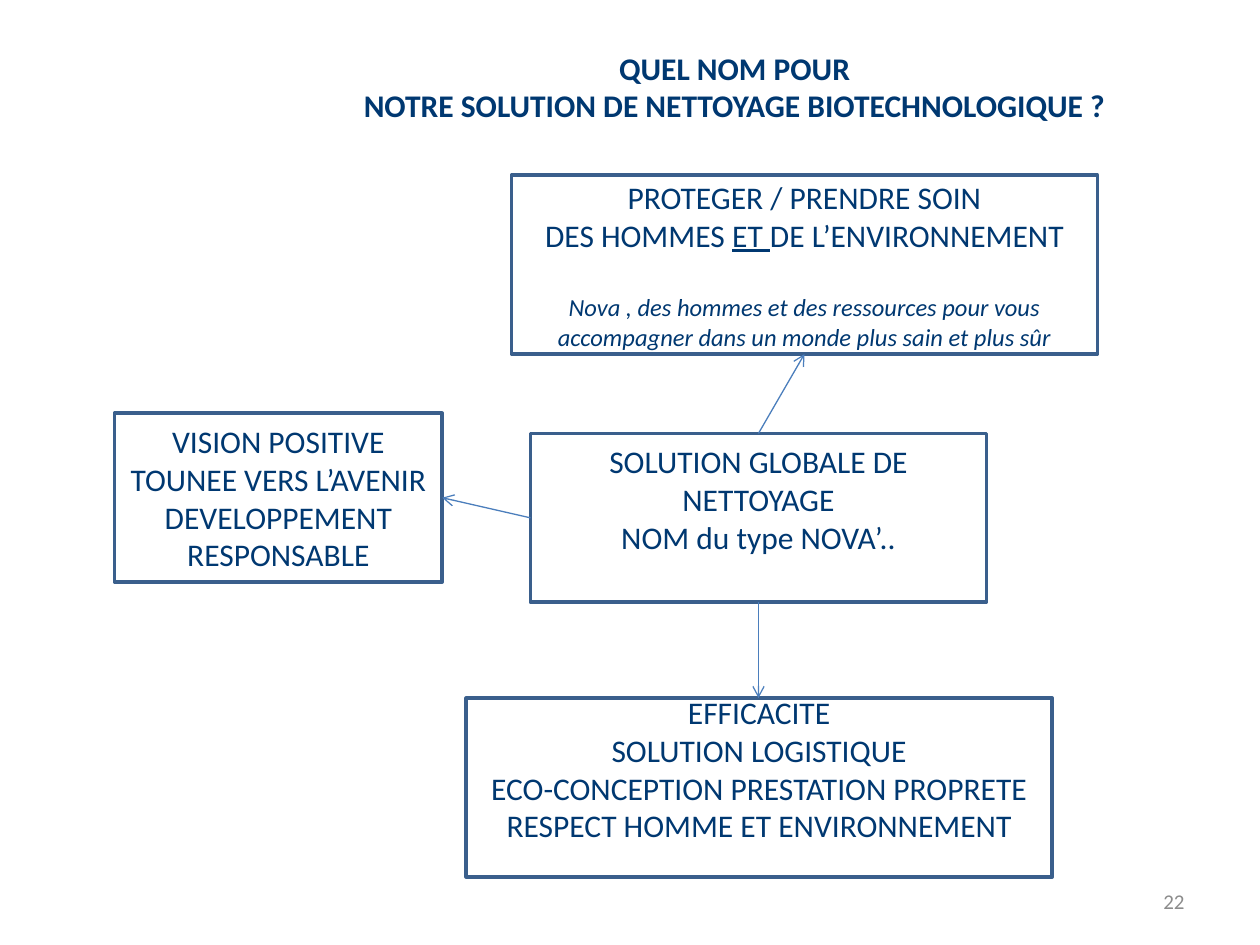
from lxml import etree
from pptx import Presentation
from pptx.dml.color import RGBColor
from pptx.enum import shapes, text
from pptx.oxml import ns
from pptx.util import Inches, Pt

COLORS = {"navy": "003871", "border": "3A5F8C", "arrow": "4B7EBC", "grey": "8C8C8C"}


def color(name):
    return RGBColor.from_string(COLORS[name])


def write(tf, paragraphs, align=text.PP_ALIGN.CENTER, top=0.05, bottom=0.05):
    """Each paragraph is (space before in points, [(text, font values), ...])."""
    frame = {"word_wrap": True, "auto_size": text.MSO_AUTO_SIZE.NONE,
             "vertical_anchor": text.MSO_ANCHOR.MIDDLE,
             "margin_top": Inches(top), "margin_bottom": Inches(bottom)}
    for name, value in frame.items():
        setattr(tf, name, value)
    for i, (before, runs) in enumerate(paragraphs):
        p = tf.add_paragraph() if i else tf.paragraphs[0]
        p.alignment = align
        if before:
            p.space_before = Pt(before)
        for words, extra in runs:
            r = p.add_run()
            r.text = words
            values = {"name": "Calibri", "size": Pt(18), **extra}
            r.font.color.rgb = color(values.pop("color", "navy"))
            for name, value in values.items():
                setattr(r.font, name, value)


prs = Presentation()
prs.slide_width, prs.slide_height = Inches(10), Inches(7.5)
s = prs.slides.add_slide(prs.slide_layouts[5])

# Title
title = s.shapes.title
title.left, title.top, title.width, title.height = map(Inches, (2.18, 0.29, 7.3, 0.71))
write(title.text_frame, [
    (0, [("QUEL NOM POUR", {"bold": True})]),
    (0, [("NOTRE SOLUTION DE NETTOYAGE BIOTECHNOLOGIQUE ?", {"bold": True})]),
], top=0.13)

# Boxes: position, bottom inset, paragraphs
boxes = {
    "solution": ((4.21, 3.44, 3.62, 1.34), 0.35, [
        (0, [("SOLUTION GLOBALE DE NETTOYAGE", {})]),
        (0, [("NOM du type NOVA’..", {})])]),
    "protection": ((4.06, 1.39, 4.65, 1.42), 0.05, [
        (0, [("PROTEGER / PRENDRE SOIN", {})]),
        (0, [("DES HOMMES ", {}), ("ET ", {"underline": True}),
             ("DE L’ENVIRONNEMENT", {})]),
        (22, [("Nova , des hommes et des ressources pour vous accompagner "
               "dans un monde plus sain et plus sûr",
               {"size": Pt(14), "italic": True})])]),
    "efficiency": ((3.7, 5.54, 4.65, 1.42), 0.35, [
        (0, [(line, {})]) for line in (
            "EFFICACITE", "SOLUTION LOGISTIQUE",
            "ECO-CONCEPTION PRESTATION PROPRETE",
            "RESPECT HOMME ET ENVIRONNEMENT")]),
    "vision": ((0.91, 3.28, 2.6, 1.34), 0.05, [
        (0, [(line, {})]) for line in (
            "VISION POSITIVE", "TOUNEE VERS L’AVENIR",
            "DEVELOPPEMENT RESPONSABLE")]),
}
placed = {}
for name, (place, bottom, paragraphs) in boxes.items():
    sp = s.shapes.add_shape(shapes.MSO_SHAPE.RECTANGLE, *map(Inches, place))
    sp.shadow.inherit = False
    sp.fill.background()
    sp.line.color.rgb = color("border")
    sp.line.width = Pt(2)
    write(sp.text_frame, paragraphs, bottom=bottom)
    placed[name] = sp

# Arrows from the solution box: start side, target box, target side, end point
arrows = [
    (0, "protection", 2, (6.02, 3.44, 6.38, 2.81)),
    (2, "efficiency", 0, (6.02, 4.78, 6.02, 5.54)),
    (1, "vision", 3, (4.21, 4.11, 3.51, 3.95)),
]
for start, target, end, points in arrows:
    line = s.shapes.add_connector(shapes.MSO_CONNECTOR.STRAIGHT, *map(Inches, points))
    line.begin_connect(placed["solution"], start)
    if target == "efficiency":
        # Lands left of the side's middle, so the end stays free
        line.end_x, line.end_y = Inches(points[2]), Inches(points[3])
    else:
        line.end_connect(placed[target], end)
    line.line.color.rgb = color("arrow")
    line.line.width = Pt(0.75)
    etree.SubElement(line.line._get_or_add_ln(), ns.qn("a:tailEnd"), type="arrow")
    etree.SubElement(line._element.spPr, ns.qn("a:effectLst"))

# Page number
number = s.shapes.add_textbox(*map(Inches, (7.17, 6.95, 2.33, 0.4)))
write(number.text_frame, [(0, [("22", {"size": Pt(12), "color": "grey"})])],
      align=text.PP_ALIGN.RIGHT)

prs.save("out.pptx")
